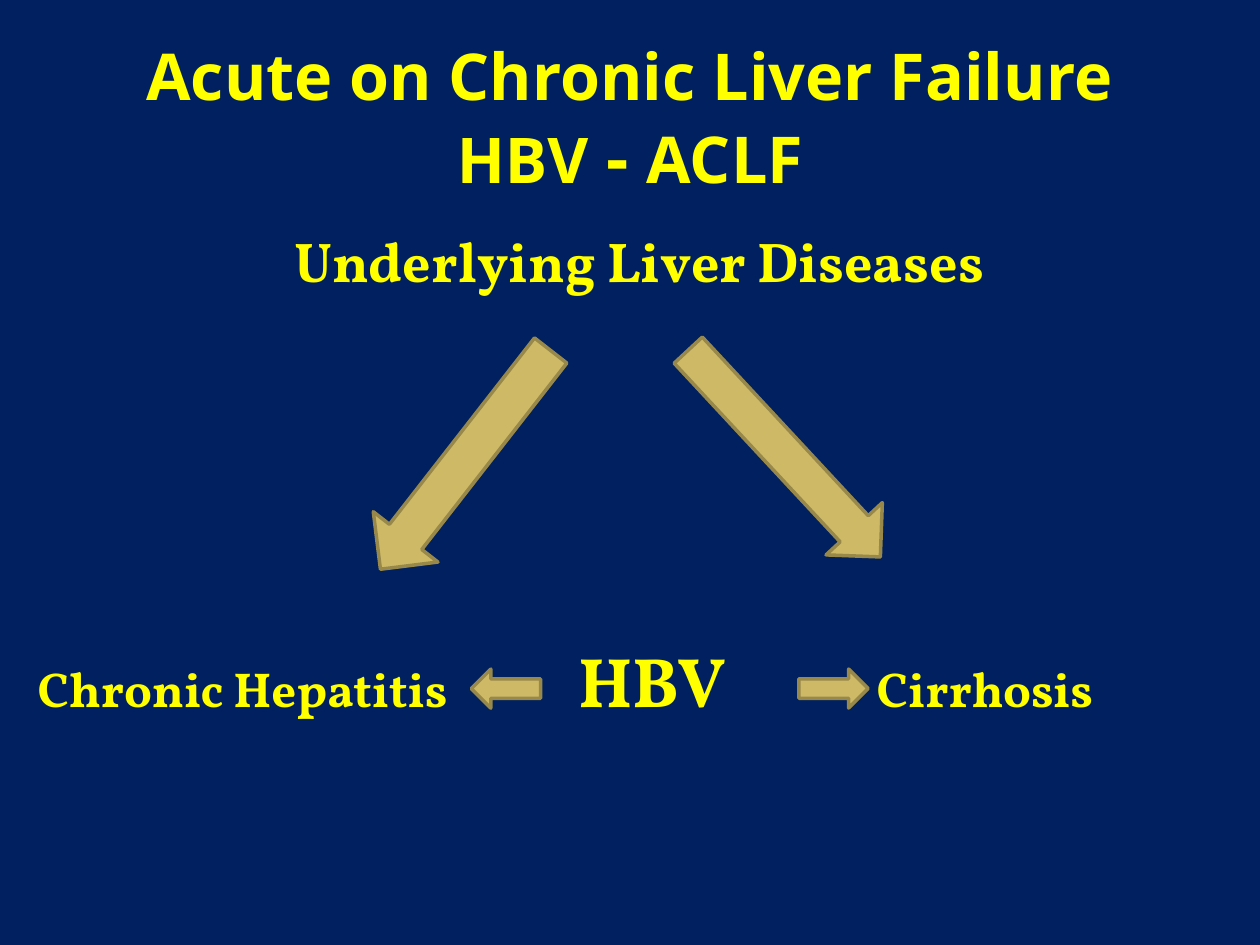
from lxml.etree import SubElement
from pptx import Presentation
from pptx.dml.color import RGBColor
from pptx.enum.shapes import MSO_SHAPE as Shape
from pptx.enum.text import MSO_ANCHOR as Anchor, PP_ALIGN as Align
from pptx.oxml.ns import qn
from pptx.util import Inches, Pt

NAVY, YELLOW, GOLD, DARK_GOLD = "002060", "FFFF00", "CEB966", "98894B"
SANS, SERIF = "Noto Sans", "Vollkorn"

# Content: each line is a list of (text, size) spans
TITLE = [[("Acute on Chronic Liver Failure", 36.9)],
         [("HBV", 36), (" - ", 39.6), ("ACLF", 36.9)]]
SUBTITLE = [[("Underlying Liver Diseases", 32)]]
CAUSES = [[("Chronic Hepatitis", 28), ("\tHBV", 40), ("\tCirrhosis", 28)]]
CAUSE_TABS = (4.29, 6.66)

# Arrows: shape, (left, top, width, height), rotation
ARROWS = [
    (Shape.DOWN_ARROW, (3.37, 2.55, 0.65, 2.2), 37.9),
    (Shape.DOWN_ARROW, (5.92, 2.48, 0.61, 2.24), 317.1),
    (Shape.RIGHT_ARROW, (3.74, 5.31, 0.55, 0.31), 180),
    (Shape.RIGHT_ARROW, (6.34, 5.31, 0.55, 0.31), 0),
]


def color(value):
    return RGBColor.from_string(value)


def add_text(page, place, lines, font, align=Align.CENTER, anchor=Anchor.TOP):
    box = page.shapes.add_textbox(*map(Inches, place))
    frame = box.text_frame
    frame.word_wrap = True
    frame.vertical_anchor = anchor
    para = frame.paragraphs[0]
    para.alignment = align
    for number, line in enumerate(lines):
        if number:
            para.add_line_break()
        for text, size in line:
            span = para.add_run()
            span.text = text
            span.font.color.rgb = color(YELLOW)
            for name, value in {"name": font, "size": Pt(size), "bold": True}.items():
                setattr(span.font, name, value)
    return frame


def add_tabs(para, stops):
    tabs = SubElement(para._p.get_or_add_pPr(), qn("a:tabLst"))
    for stop in stops:
        SubElement(tabs, qn("a:tab"), pos=str(Inches(stop)), algn="l")


def add_arrow(page, kind, place, rotation):
    arrow = page.shapes.add_shape(kind, *map(Inches, place))
    arrow.rotation = rotation
    arrow.shadow.inherit = False
    arrow.fill.solid()
    arrow.fill.fore_color.rgb = color(GOLD)
    arrow.line.color.rgb = color(DARK_GOLD)
    arrow.line.width = Pt(2)


def main():
    deck = Presentation()
    deck.slide_width, deck.slide_height = Inches(10), Inches(7.5)
    page = deck.slides.add_slide(deck.slide_layouts[6])
    page.background.fill.solid()
    page.background.fill.fore_color.rgb = color(NAVY)

    # Headings
    add_text(page, (0.5, 0.3, 9, 1.25), TITLE, SANS, anchor=Anchor.MIDDLE)
    subtitle = add_text(page, (0.5, 1.75, 9, 2.87), SUBTITLE, SERIF)
    subtitle.margin_left = Inches(0.25)

    # Row of causes, aligned by tab stops
    causes = add_text(page, (0.2, 5.01, 9.3, 1.25), CAUSES, SERIF, Align.LEFT)
    add_tabs(causes.paragraphs[0], CAUSE_TABS)

    for arrow in ARROWS:
        add_arrow(page, *arrow)

    deck.save("out.pptx")


if __name__ == "__main__":
    main()
